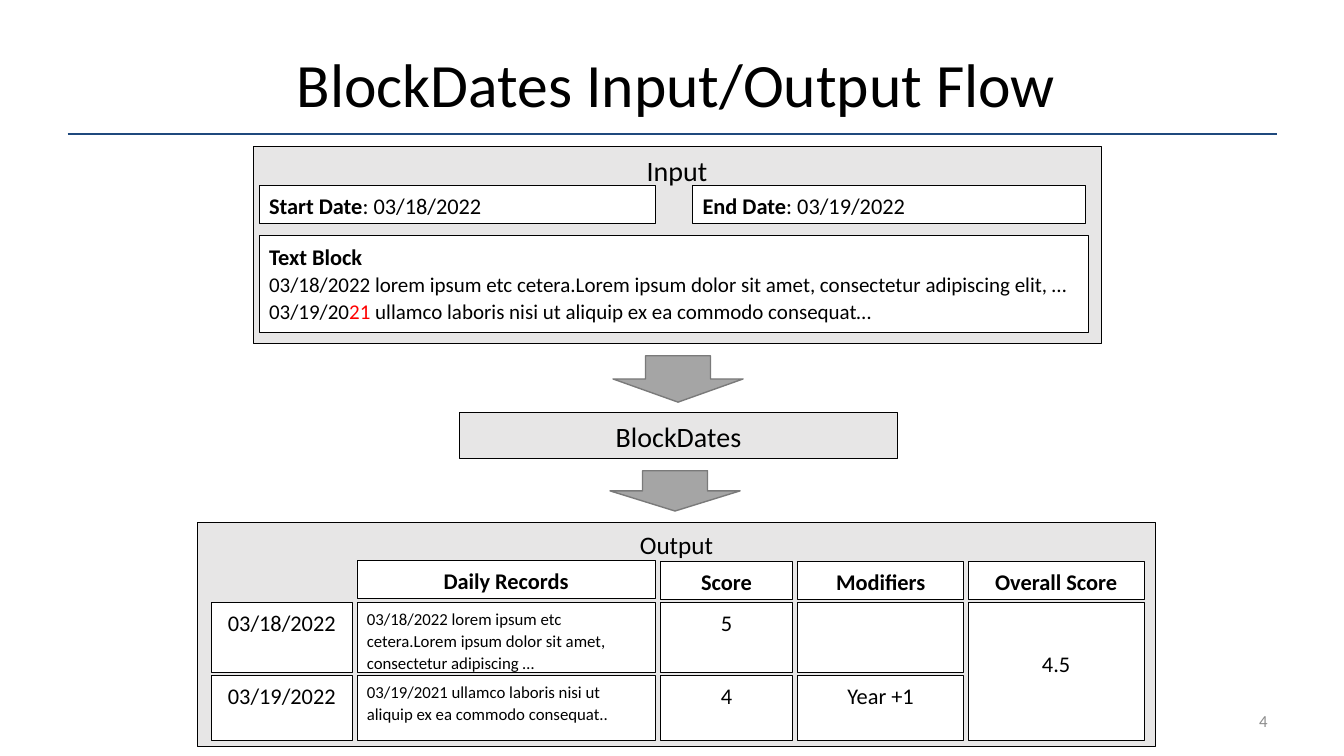
from dataclasses import dataclass

from lxml.etree import SubElement
from pptx import Presentation
from pptx.dml.color import RGBColor
from pptx.enum.shapes import MSO_CONNECTOR, MSO_SHAPE
from pptx.enum.text import MSO_ANCHOR as Anchor, PP_ALIGN as Align
from pptx.oxml.ns import qn
from pptx.util import Inches, Pt


@dataclass(frozen=True)
class Theme:
    font: str = "Calibri"
    black: str = "000000"
    white: str = "FFFFFF"
    panel: str = "E7E6E6"
    arrow: str = "A5A5A5"
    arrow_edge: str = "7A7A7A"
    rule: str = "1F497D"
    alert: str = "FF0000"
    muted: str = "8C8C8C"
    title: int = 44
    heading: int = 20
    subheading: int = 18
    label: int = 16
    body: int = 15
    small: int = 12


@dataclass(frozen=True)
class Rect:
    left: float
    top: float
    width: float
    height: float

    def lengths(self):
        return [Inches(v) for v in (self.left, self.top, self.width, self.height)]


@dataclass(frozen=True)
class Run:
    text: str
    bold: bool = False
    color: str = Theme.black


@dataclass(frozen=True)
class Column:
    left: float
    width: float
    header: str
    cells: tuple[str, ...]
    size: int = Theme.label
    align: Align = Align.CENTER
    header_top: float = 5.57


T = Theme()


def rgb(color: str) -> RGBColor:
    return RGBColor.from_string(color)


def write(tf, *runs: Run, size: int, align: Align = Align.LEFT,
          spacing: float = 1.07, after: float = 8, first: bool = True) -> None:
    p = tf.paragraphs[0] if first else tf.add_paragraph()
    p.alignment, p.line_spacing, p.space_after = align, spacing, Pt(after)
    for run in runs:
        r = p.add_run()
        r.text = run.text
        r.font.name, r.font.size, r.font.bold = T.font, Pt(size), run.bold
        r.font.color.rgb = rgb(run.color)


def add_block(s, rect: Rect, fill: str = T.white, edge: str = T.black,
              weight: float = 0.5, kind: MSO_SHAPE = MSO_SHAPE.RECTANGLE):
    sp = s.shapes.add_shape(kind, *rect.lengths())
    sp.shadow.inherit = False
    sp.fill.solid()
    sp.fill.fore_color.rgb = rgb(fill)
    sp.line.color.rgb = rgb(edge)
    sp.line.width = Pt(weight)
    tf = sp.text_frame
    tf.word_wrap = True
    tf.vertical_anchor = Anchor.TOP
    return tf


def add_label(s, rect: Rect, run: Run, size: int, align: Align) -> None:
    tf = s.shapes.add_textbox(*rect.lengths()).text_frame
    tf.word_wrap = True
    tf.vertical_anchor = Anchor.MIDDLE
    write(tf, run, size=size, align=align, spacing=1, after=0)


def add_rule(s, left: float, right: float, top: float) -> None:
    line = s.shapes.add_connector(MSO_CONNECTOR.STRAIGHT, Inches(left), Inches(top),
                                  Inches(right), Inches(top))
    line.line.color.rgb = rgb(T.rule)
    line.line.width = Pt(2)
    SubElement(line._element.spPr, qn("a:effectLst"))


def add_panel(s, rect: Rect, name: str, size: int) -> None:
    write(add_block(s, rect, T.panel), Run(name), size=size, align=Align.CENTER)


def add_arrow(s, rect: Rect) -> None:
    add_block(s, rect, T.arrow, T.arrow_edge, 1, MSO_SHAPE.DOWN_ARROW)


def add_input(s) -> None:
    add_panel(s, Rect(2.51, 1.45, 8.41, 1.96), "Input", T.heading)
    tf = add_block(s, Rect(2.57, 2.34, 8.22, 0.96))
    write(tf, Run("Text Block", bold=True), size=T.label, after=0)
    write(tf, Run("03/18/2022 lorem ipsum etc cetera.Lorem ipsum dolor sit amet, "
                  "consectetur adipiscing elit, …"), size=T.body, after=0, first=False)
    write(tf, Run("03/19/20"), Run("21 ", color=T.alert),
          Run("ullamco laboris nisi ut aliquip ex ea commodo consequat…"),
          size=T.body, after=0, first=False)
    for left, width, name, date in ((2.57, 3.93, "Start Date", "03/18/2022"),
                                    (6.87, 3.89, "End Date", "03/19/2022")):
        write(add_block(s, Rect(left, 1.84, width, 0.38)),
              Run(name, bold=True), Run(f": {date}"), size=T.label)


def add_output(s) -> None:
    columns = (
        Column(2.1, 1.39, "", ("03/18/2022", "03/19/2022")),
        Column(3.54, 2.96, "Daily Records",
               ("03/18/2022 lorem ipsum etc cetera.Lorem ipsum dolor sit amet, "
                "consectetur adipiscing …",
                "03/19/2021 ullamco laboris nisi ut aliquip ex ea commodo consequat.."),
               T.small, Align.LEFT, 5.56),
        Column(6.55, 1.31, "Score", ("5", "4")),
        Column(7.91, 1.65, "Modifiers", ("", "Year +1")),
        Column(9.6, 1.75, "Overall Score", ("4.5",)),
    )
    rows = ((5.98, 0.69), (6.7, 0.65))
    bottom = 7.35
    add_panel(s, Rect(1.96, 5.18, 9.5, 2.23), "Output", T.subheading)
    for col in columns:
        if col.header:
            write(add_block(s, Rect(col.left, col.header_top, col.width, 0.38)),
                  Run(col.header, bold=True), size=T.label, align=Align.CENTER)
        merged = len(col.cells) == 1
        for text, (top, height) in zip(col.cells, rows):
            tf = add_block(s, Rect(col.left, top, col.width,
                                   bottom - top if merged else height))
            if merged:
                tf.margin_top = Inches(0.45)
            if text:
                write(tf, Run(text), size=col.size, align=col.align)


def main() -> None:
    prs = Presentation()
    prs.slide_width, prs.slide_height = Inches(13.33), Inches(7.5)
    s = prs.slides.add_slide(prs.slide_layouts[6])
    add_rule(s, 0.67, 12.67, 1.33)
    add_label(s, Rect(0.71, 0.31, 12, 1.02), Run("BlockDates Input/Output Flow"),
              T.title, Align.CENTER)
    add_label(s, Rect(9.56, 6.95, 3.11, 0.4), Run("4", color=T.muted),
              T.small, Align.RIGHT)
    add_input(s)
    add_arrow(s, Rect(6.08, 3.53, 1.29, 0.46))
    add_panel(s, Rect(4.56, 4.09, 4.34, 0.46), "BlockDates", T.heading)
    add_arrow(s, Rect(6.05, 4.67, 1.29, 0.4))
    add_output(s)
    prs.save("out.pptx")


if __name__ == "__main__":
    main()
